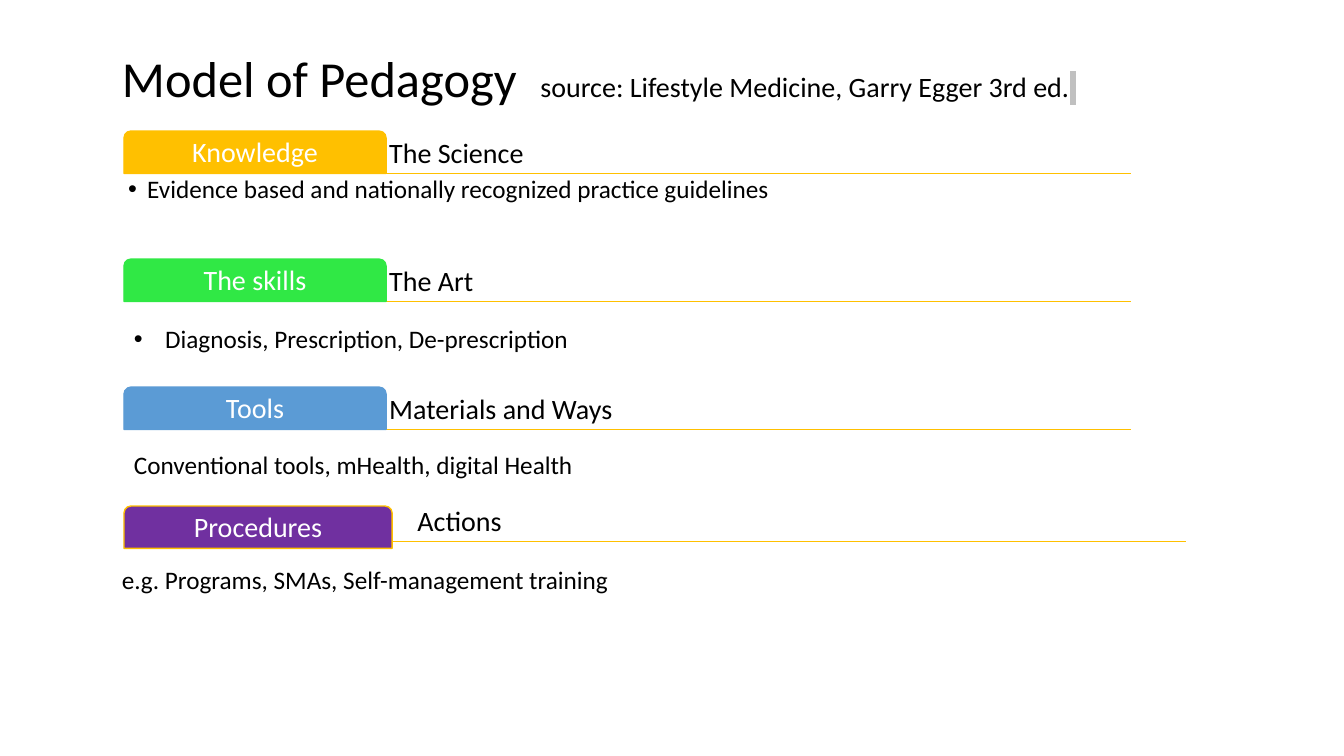
from dataclasses import dataclass

from lxml.etree import SubElement
from pptx import Presentation
from pptx.dml.color import RGBColor
from pptx.enum.shapes import MSO_CONNECTOR, MSO_SHAPE
from pptx.enum.text import MSO_ANCHOR, MSO_AUTO_SIZE, PP_ALIGN
from pptx.oxml.ns import qn
from pptx.util import Inches, Pt

BLACK = RGBColor(0x00, 0x00, 0x00)
WHITE = RGBColor(0xFF, 0xFF, 0xFF)
GOLD = RGBColor(0xFF, 0xC0, 0x00)
GREEN = RGBColor(0x30, 0xE8, 0x45)
BLUE = RGBColor(0x5B, 0x9B, 0xD5)
PURPLE = RGBColor(0x70, 0x30, 0xA0)
HIGHLIGHT = RGBColor(0xC0, 0xC0, 0xC0)
FONT = "Calibri"
LEFT = 1.23
TAB_HEIGHT = 0.42
INSET = 0.04


@dataclass
class Section:
    label: str
    heading: str
    top: float
    fill: RGBColor
    border: RGBColor
    tab_width: float = 2.6
    rule_top: float = TAB_HEIGHT
    rule_width: float = 9.99
    heading_left: float = 2.59
    heading_top: float = 0
    heading_inset: float = INSET


SECTIONS = [
    Section("Knowledge", "The Science", 1.3, GOLD, GOLD),
    Section("The skills", "The Art", 2.57, GREEN, GREEN),
    Section("Tools", "Materials and Ways", 3.84, BLUE, BLUE),
    Section("Procedures", "Actions", 5.02, PURPLE, GOLD, tab_width=2.66,
            rule_top=0.35, rule_width=10.53, heading_left=2.74,
            heading_top=-0.07, heading_inset=0.17),
]


def add_span(para, text, size, color=BLACK):
    span = para.add_run()
    span.text = text
    span.font.size = Pt(size)
    span.font.name = FONT
    span.font.color.rgb = color
    return span


def write(shape, text, size=18, color=BLACK, align=PP_ALIGN.LEFT,
          anchor=MSO_ANCHOR.TOP, insets=(0.1, 0.05, 0.1, 0.05),
          line_spacing=1.0, space_after=0, bullet_indent=0):
    frame = shape.text_frame
    frame.word_wrap = True
    frame.vertical_anchor = anchor
    (frame.margin_left, frame.margin_top,
     frame.margin_right, frame.margin_bottom) = map(Inches, insets)
    para = frame.paragraphs[0]
    if bullet_indent:
        properties = para._p.get_or_add_pPr()
        properties.set("marL", str(Inches(bullet_indent)))
        properties.set("indent", str(-Inches(bullet_indent)))
        SubElement(properties, qn("a:buFont"), typeface="Arial")
        SubElement(properties, qn("a:buChar"), char="•")
    para.alignment = align
    para.line_spacing = line_spacing
    para.space_after = Pt(space_after)
    add_span(para, text, size, color)
    return para


def add_text(page, box, text, **text_format):
    shape = page.shapes.add_textbox(*map(Inches, box))
    write(shape, text, **text_format)
    return shape


def add_title(page, box):
    title = page.shapes.title
    title.left, title.top, title.width, title.height = map(Inches, box)
    para = write(title, "Model of Pedagogy", size=36, line_spacing=0.8)
    title.text_frame.auto_size = MSO_AUTO_SIZE.NONE
    # Tab stop between the title and its source
    tabs = SubElement(para._p.get_or_add_pPr(), qn("a:tabLst"))
    SubElement(tabs, qn("a:tab"), pos=str(Inches(4.15)), algn="l")
    add_span(para, "\tsource: Lifestyle Medicine, Garry Egger 3rd ed.", 20)
    # Grey marker at the end of the line
    marker = add_span(para, " ", 20)
    highlight = SubElement(marker.font._element, qn("a:highlight"))
    SubElement(highlight, qn("a:srgbClr"), val=str(HIGHLIGHT))
    marker.font._element.find(qn("a:solidFill")).addnext(highlight)


def add_section(page, left, section):
    # Rule
    rule_y = Inches(section.top + section.rule_top)
    rule = page.shapes.add_connector(
        MSO_CONNECTOR.STRAIGHT, Inches(left), rule_y,
        Inches(left + section.rule_width), rule_y)
    rule.line.color.rgb = GOLD
    rule.line.width = Pt(1)
    SubElement(rule._element.spPr, qn("a:effectLst"))
    # Heading
    add_text(page, (left + section.heading_left, section.top + section.heading_top,
                    section.rule_width - section.heading_left, TAB_HEIGHT),
             section.heading, size=20, anchor=MSO_ANCHOR.BOTTOM,
             insets=(section.heading_inset, INSET, INSET, INSET),
             line_spacing=0.9, space_after=8)
    # Tab
    tab = page.shapes.add_shape(
        MSO_SHAPE.ROUND_2_SAME_RECTANGLE, Inches(left), Inches(section.top),
        Inches(section.tab_width), Inches(TAB_HEIGHT))
    tab.shadow.inherit = False
    tab.fill.solid()
    tab.fill.fore_color.rgb = section.fill
    tab.line.color.rgb = section.border
    tab.line.width = Pt(1)
    write(tab, section.label, size=20, color=WHITE, align=PP_ALIGN.CENTER,
          anchor=MSO_ANCHOR.MIDDLE, insets=(INSET,) * 4,
          line_spacing=0.9, space_after=8)


def add_notes_under_sections(page, left):
    add_text(page, (left, 1.71, 9.99, 0.83),
             "Evidence based and nationally recognized practice guidelines",
             insets=(INSET,) * 4, line_spacing=0.9, space_after=3,
             bullet_indent=0.19)
    fitted = [
        add_text(page, (left, 3.16, 6.98, 0.4),
                 "Diagnosis, Prescription, De-prescription", bullet_indent=0.31),
        add_text(page, (left, 4.41, 4.6, 0.4),
                 "Conventional tools, mHealth, digital Health"),
        add_text(page, (left - 0.12, 5.55, 5.75, 0.4),
                 "e.g. Programs, SMAs, Self-management training"),
    ]
    for shape in fitted:
        shape.text_frame.auto_size = MSO_AUTO_SIZE.SHAPE_TO_FIT_TEXT


def main():
    deck = Presentation()
    deck.slide_width, deck.slide_height = Inches(13.33), Inches(7.5)
    page = deck.slides.add_slide(deck.slide_layouts[5])
    add_title(page, (1.11, 0.53, 10.65, 0.6))
    for section in SECTIONS:
        add_section(page, LEFT, section)
    add_notes_under_sections(page, LEFT)
    deck.save("out.pptx")


if __name__ == "__main__":
    main()
